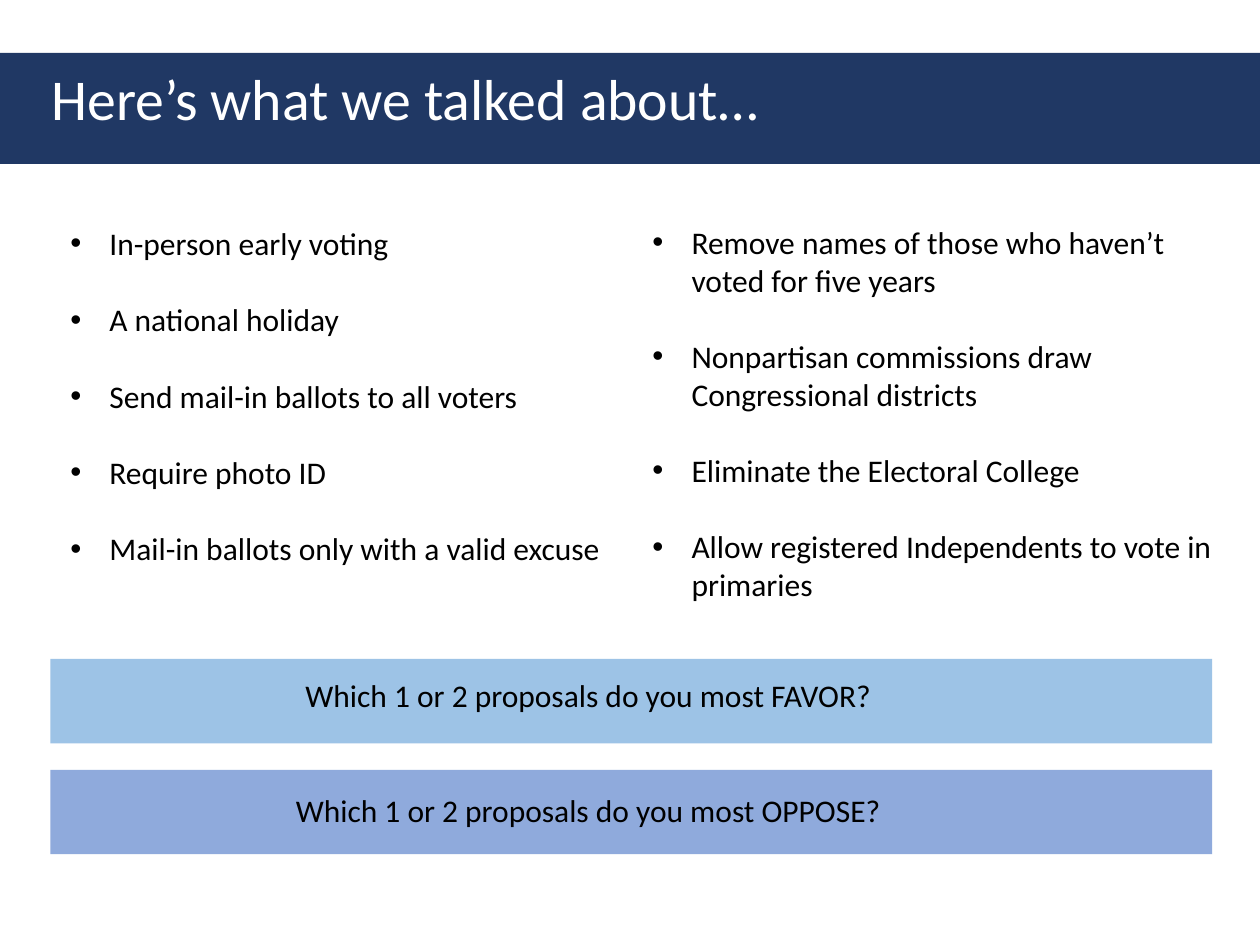
from lxml import etree
from pptx import Presentation
from pptx.dml.color import RGBColor
from pptx.enum.shapes import MSO_SHAPE
from pptx.enum.text import MSO_ANCHOR, PP_ALIGN
from pptx.oxml.ns import qn
from pptx.util import Inches, Pt

RECT = MSO_SHAPE.RECTANGLE
TOP, MIDDLE = MSO_ANCHOR.TOP, MSO_ANCHOR.MIDDLE
LEFT, CENTER = PP_ALIGN.LEFT, PP_ALIGN.CENTER
NAVY = RGBColor(0x20, 0x38, 0x64)
SKY = RGBColor(0x9D, 0xC3, 0xE6)
PERIWINKLE = RGBColor(0x8F, 0xAA, 0xDC)
WHITE = RGBColor(0xFF, 0xFF, 0xFF)
BLACK = RGBColor(0, 0, 0)
FONT = "Calibri"
LINE_HEIGHT = 22

TITLE = "Here’s what we talked about…"
PROPOSALS_LEFT = [
    "In-person early voting",
    "A national holiday",
    "Send mail-in ballots to all voters",
    "Require photo ID",
    "Mail-in ballots only with a valid excuse",
]
PROPOSALS_RIGHT = [
    "Remove names of those who haven’t voted for five years",
    "Nonpartisan commissions draw Congressional districts",
    "Eliminate the Electoral College",
    "Allow registered Independents to vote in primaries",
]
QUESTIONS = [
    "Which 1 or 2 proposals do you most FAVOR?",
    "Which 1 or 2 proposals do you most OPPOSE?",
]


def add_bar(s, box, color):
    """Add a plain filled rectangle without outline or shadow."""
    sp = s.shapes.add_shape(RECT, *map(Inches, box))
    sp.shadow.inherit = False
    sp.fill.solid()
    sp.fill.fore_color.rgb = color
    sp.line.fill.background()


def add_text(s, box, lines, size=18, color=BLACK, anchor=TOP, **paragraph_format):
    """Add a wrapped text box with one paragraph per line and return its paragraphs."""
    tf = s.shapes.add_textbox(*map(Inches, box)).text_frame
    tf.word_wrap = True
    tf.vertical_anchor = anchor
    for i, line in enumerate(lines):
        p = tf.add_paragraph() if i else tf.paragraphs[0]
        for name, value in paragraph_format.items():
            setattr(p, name, value)
        r = p.add_run()
        r.text = line
        for name, value in {"name": FONT, "size": Pt(size)}.items():
            setattr(r.font, name, value)
        r.font.color.rgb = color
    return tf.paragraphs


def add_bullets(s, box, lines):
    """Add a bulleted list with one line of space between items."""
    for p in add_text(s, box, lines, alignment=LEFT, space_after=Pt(LINE_HEIGHT)):
        pPr = p._p.get_or_add_pPr()
        pPr.set("marL", str(Inches(0.31)))
        pPr.set("indent", str(Inches(-0.31)))
        etree.SubElement(pPr, qn("a:buFont"), typeface="Arial")
        etree.SubElement(pPr, qn("a:buChar"), char="•")


def main():
    """Build the slide and save it."""
    prs = Presentation()
    prs.slide_width, prs.slide_height = Inches(10), Inches(7.5)
    s = prs.slides.add_slide(prs.slide_layouts[6])

    add_bar(s, (0, 0.42, 10, 0.88), NAVY)
    add_text(s, (0.31, 0.42, 9, 0.77), [TITLE], 33, WHITE, MIDDLE, line_spacing=0.9)
    add_bullets(s, (0.46, 1.73, 4.65, 2.83), PROPOSALS_LEFT)
    add_bullets(s, (5.08, 1.72, 4.85, 3.13), PROPOSALS_RIGHT)

    for i, color in enumerate((SKY, PERIWINKLE)):
        add_bar(s, (0.4, 5.23 + 0.88 * i, 9.22, 0.67), color)
    add_text(s, (0.4, 5.32, 8.54, 1.31), QUESTIONS,
             alignment=CENTER, space_after=Pt(2 * LINE_HEIGHT))

    prs.save("out.pptx")


if __name__ == "__main__":
    main()
